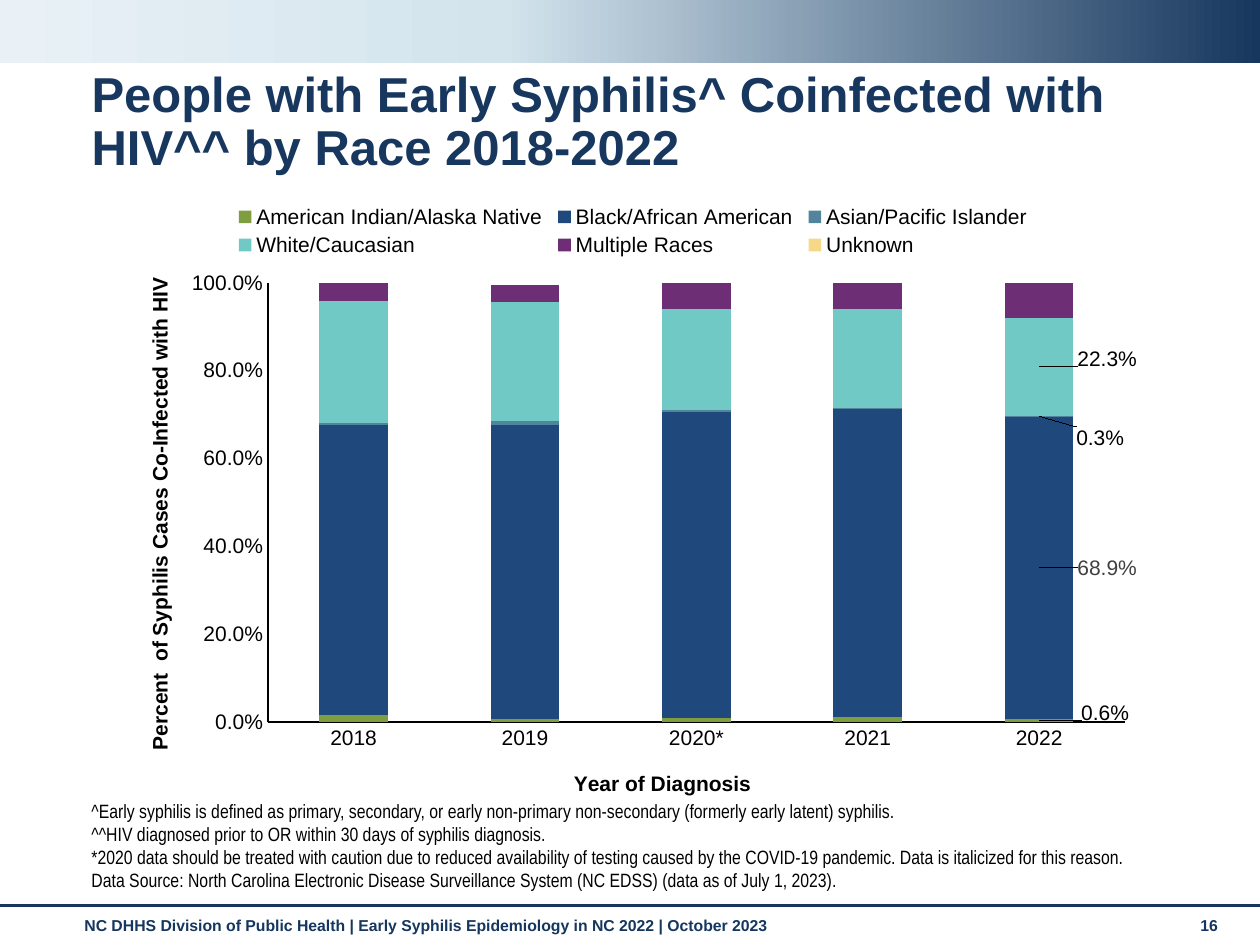
from copy import deepcopy

from lxml import etree
from pptx import Presentation
from pptx.chart.data import CategoryChartData
from pptx.dml.color import RGBColor
from pptx.enum.chart import XL_CHART_TYPE, XL_LEGEND_POSITION, XL_TICK_MARK
from pptx.enum.shapes import MSO_CONNECTOR, MSO_SHAPE
from pptx.enum.text import MSO_ANCHOR, MSO_AUTO_SIZE
from pptx.oxml.ns import qn
from pptx.util import Emu, Pt

STACKED = XL_CHART_TYPE.COLUMN_STACKED
LEGEND_TOP = XL_LEGEND_POSITION.TOP
NO_TICK = XL_TICK_MARK.NONE
STRAIGHT = MSO_CONNECTOR.STRAIGHT
RECTANGLE = MSO_SHAPE.RECTANGLE
TOP, BOTTOM = MSO_ANCHOR.TOP, MSO_ANCHOR.BOTTOM
NO_AUTOFIT = MSO_AUTO_SIZE.NONE

PX_PER_INCH = 126
SLIDE_WIDTH, SLIDE_HEIGHT = 1260, 945
NAVY, BLACK = "17375E", "000000"
PERCENT = "0.0%"

YEARS = ["2018", "2019", "2020*", "2021", "2022"]
SERIES = [
    ("American Indian/Alaska Native", "7F9E3F", [0.015, 0.006, 0.008, 0.011, 0.006], BLACK, (66, -7)),
    ("Black/African American", "1F497D", [0.662, 0.67, 0.698, 0.701, 0.689], "404040", (68, 0)),
    ("Asian/Pacific Islander", "52849C", [0.003, 0.009, 0.004, 0.004, 0.003], BLACK, (61, 22)),
    ("White/Caucasian", "71C9C5", [0.279, 0.271, 0.231, 0.224, 0.223], BLACK, (68, -7)),
    ("Multiple Races", "6D2E75", [0.04, 0.04, 0.06, 0.06, 0.08], None, None),
    ("Unknown", "F6D888", [0, 0, 0.003, 0, 0.002], BLACK, (66, -10)),
]
FOOTNOTES = [
    "^Early syphilis is defined as primary, secondary, or early non-primary non-secondary (formerly early latent) syphilis.",
    "^^HIV diagnosed prior to OR within 30 days of syphilis diagnosis.",
    "*2020 data should be treated with caution due to reduced availability of testing caused by the COVID-19 pandemic. Data is italicized for this reason.",
    "Data Source: North Carolina Electronic Disease Surveillance System (NC EDSS) (data as of July 1, 2023).",
]


def px(length):
    return Emu(round(length * 914400 / PX_PER_INCH))


def color(hex_string):
    return RGBColor.from_string(hex_string)


def set_font(font, size, hex_string, bold=False, name="Arial"):
    font.name = name
    font.size = Pt(size)
    font.bold = bold
    font.color.rgb = color(hex_string)


def add_text(slide, box, lines, size, hex_string, bold=False, name="Arial", anchor=TOP):
    frame = slide.shapes.add_textbox(*map(px, box)).text_frame
    frame.word_wrap = True
    frame.vertical_anchor = anchor
    frame.text = "\n".join(lines)
    for paragraph in frame.paragraphs:
        set_font(paragraph.font, size, hex_string, bold, name)


def add_banner(slide, box):
    banner = slide.shapes.add_shape(RECTANGLE, *map(px, box))
    banner.shadow.inherit = False
    banner.line.fill.background()
    banner.fill.gradient()
    banner.fill.gradient_angle = 0
    first = next(banner._element.iter(qn("a:gs")))
    first.addnext(deepcopy(first))
    stops = [(0, "E9F1F6"), (0.4, "D3E4ED"), (1, NAVY)]
    for stop, (position, hex_string) in zip(banner.fill.gradient_stops, stops):
        stop.position = position
        stop.color.rgb = color(hex_string)


def add_title(slide, box, text):
    title = slide.shapes.title
    title.left, title.top, title.width, title.height = map(px, box)
    frame = title.text_frame
    frame.word_wrap = True
    frame.auto_size = NO_AUTOFIT
    frame.vertical_anchor = TOP
    frame.text = text
    paragraph = frame.paragraphs[0]
    paragraph.line_spacing = 0.9
    pPr = paragraph._p.get_or_add_pPr()
    pPr.set("algn", "l")
    set_font(paragraph.font, 28, NAVY, True)


def add_footer(slide, box):
    left, top, width, height = box
    rule = slide.shapes.add_connector(STRAIGHT, px(left), px(top), px(left + width), px(top))
    rule.line.color.rgb = color(NAVY)
    rule.line.width = Pt(1.75)
    etree.SubElement(rule._element.spPr, qn("a:effectLst"))
    credit = "NC DHHS Division of Public Health | Early Syphilis Epidemiology in NC 2022 | October 2023"
    add_text(slide, (left + 72, top + 4, 1101, 37), [credit], 9, "15365E", True)
    add_text(slide, (left + 1188, top + 4, 56, 37), ["16"], 9, "15365E", True)


def set_layout(parent, index, chart_size, position, size=None, inner=False, offset=False):
    layout = parent.find(qn("c:layout"))
    if layout is not None:
        parent.remove(layout)
    layout = etree.Element(qn("c:layout"))
    parent.insert(index, layout)
    manual = etree.SubElement(layout, qn("c:manualLayout"))
    values = []
    if inner:
        values.append(("layoutTarget", "inner"))
    if not offset:
        values += [("xMode", "edge"), ("yMode", "edge")]
    lengths = zip("xywh", (*position, *(size or ())), chart_size * 2)
    values += [(key, f"{length / total:.4f}") for key, length, total in lengths]
    for key, value in values:
        etree.SubElement(manual, qn(f"c:{key}")).set("val", value)


def format_axis(axis, title, position, chart_size):
    axis.has_major_gridlines = False
    axis.major_tick_mark = axis.minor_tick_mark = NO_TICK
    axis.format.line.color.rgb = color(BLACK)
    axis.format.line.width = Pt(0.75)
    set_font(axis.tick_labels.font, 12, BLACK)
    frame = axis.axis_title.text_frame
    frame.text = title
    set_font(frame.paragraphs[0].font, 12, BLACK, True)
    set_layout(axis.axis_title._element, 1, chart_size, position)


def label_last_point(series, hex_string, offset, chart_size):
    series.data_labels.show_value = False
    label = series.points[len(YEARS) - 1].data_label
    set_font(label.font, 12, hex_string)
    element = next(series._element.iter(qn("c:dLbl")))
    set_layout(element, 1, chart_size, offset, offset=True)


def add_race_chart(slide, box):
    chart_size = box[2:]
    data = CategoryChartData(number_format=PERCENT)
    data.categories = YEARS
    for name, _, values, _, _ in SERIES:
        data.add_series(name, values)
    chart = slide.shapes.add_chart(STACKED, *map(px, box), data).chart
    chart.has_title = False
    set_font(chart.font, 10, BLACK)

    chart.has_legend = True
    chart.legend.position = LEGEND_TOP
    chart.legend.include_in_layout = False
    set_font(chart.legend.font, 12, BLACK)
    set_layout(chart.legend._element, 1, chart_size, (115, 8), (806, 62))

    format_axis(chart.category_axis, "Year of Diagnosis", (455, 575), chart_size)
    format_axis(chart.value_axis, "Percent  of Syphilis Cases Co-Infected with HIV", (28, 82), chart_size)
    chart.value_axis.minimum_scale = 0
    chart.value_axis.maximum_scale = 1
    chart.value_axis.major_unit = 0.2
    chart.value_axis.tick_labels.number_format = PERCENT
    chart.value_axis.tick_labels.number_format_is_linked = False

    plot = chart.plots[0]
    plot.gap_width = 150
    plot.overlap = 100
    plot.vary_by_categories = False
    plot_area = chart._chartSpace.chart.plotArea
    set_layout(plot_area, 0, chart_size, (153, 91), (857, 439), inner=True)
    for series, (_, fill, _, label_color, offset) in zip(plot.series, SERIES):
        series.format.fill.solid()
        series.format.fill.fore_color.rgb = color(fill)
        if label_color:
            label_last_point(series, label_color, offset, chart_size)


def main():
    presentation = Presentation()
    presentation.slide_width = px(SLIDE_WIDTH)
    presentation.slide_height = px(SLIDE_HEIGHT)
    slide = presentation.slides.add_slide(presentation.slide_layouts[5])
    add_banner(slide, (0, 0, SLIDE_WIDTH, 63))
    add_footer(slide, (0, 906, SLIDE_WIDTH, 39))
    add_title(slide, (79, 64, 1164, 76), "People with Early Syphilis^ Coinfected with HIV^^ by Race 2018-2022")
    add_text(slide, (79, 819, 1101, 79), FOOTNOTES, 11, BLACK, name="Arial Narrow", anchor=BOTTOM)
    add_race_chart(slide, (115, 192, 1031, 626))
    presentation.save("out.pptx")


if __name__ == "__main__":
    main()
